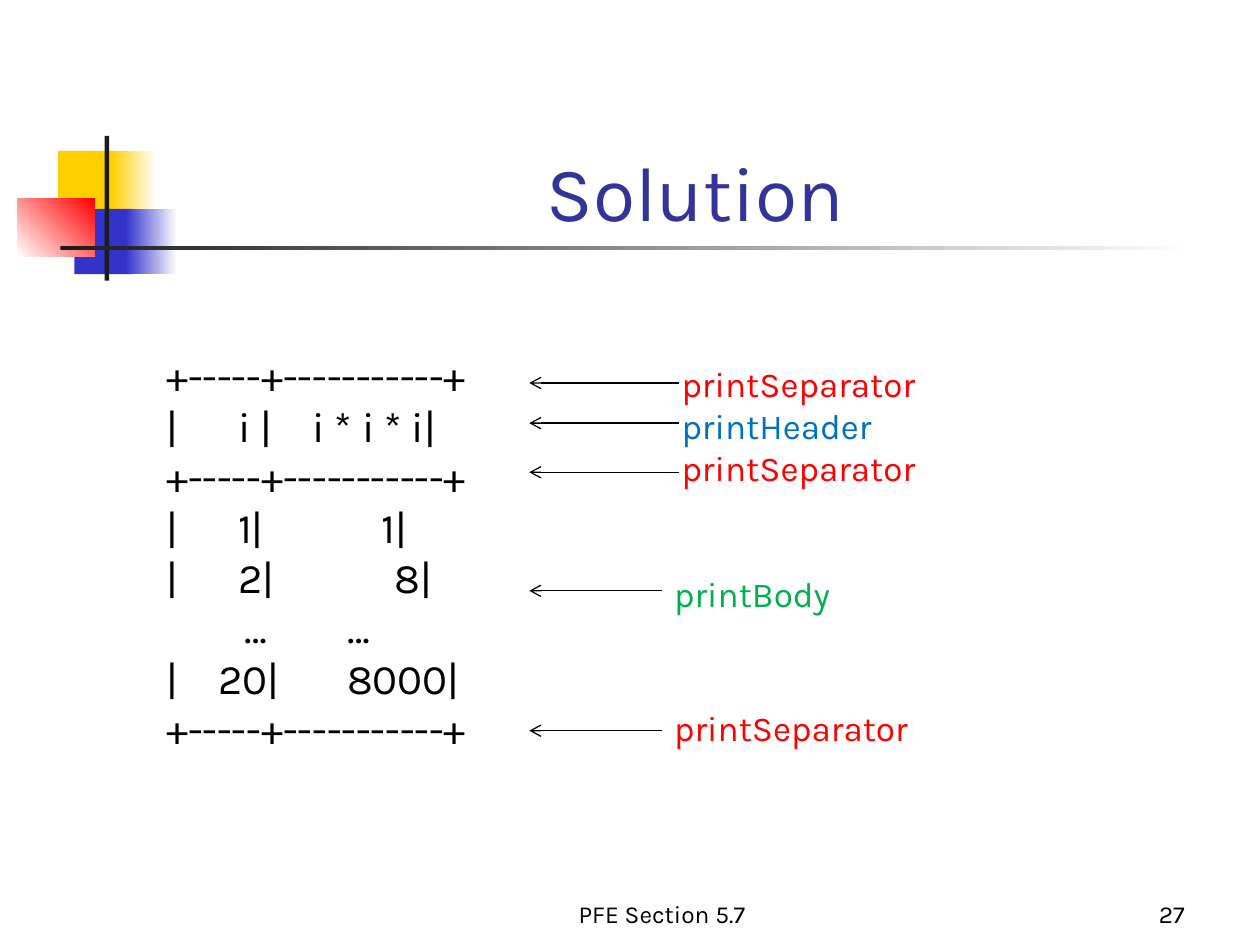
from lxml.etree import SubElement
from pptx import Presentation
from pptx.dml.color import RGBColor
from pptx.enum.shapes import MSO_CONNECTOR, MSO_SHAPE
from pptx.enum.text import MSO_ANCHOR, PP_ALIGN
from pptx.oxml.ns import qn
from pptx.util import Cm, Pt

HUES = {
    "black": "000000", "white": "FFFFFF", "dark": "1C1C1C", "gold": "FFCF01",
    "blue": "3333CC", "red": "FF0000", "navy": "333399", "sky": "0070C0",
    "green": "00B050",
}


def color(name):
    return RGBColor.from_string(HUES[name])


def apply(target, values):
    for name, value in values.items():
        setattr(target, name, value)


def add_frame(slide, box, anchor=MSO_ANCHOR.TOP):
    frame = slide.shapes.add_textbox(*map(Cm, box)).text_frame
    apply(frame, {"word_wrap": True, "vertical_anchor": anchor})
    return frame


def add_line(frame, index, text, size, hue, **format):
    line = frame.add_paragraph() if index else frame.paragraphs[0]
    apply(line, format)
    run = line.add_run()
    run.text = text
    apply(run.font, {"name": "Karla", "size": Pt(size)})
    run.font.color.rgb = color(hue)
    return line


def draw_caption(slide, box, text, size, hue, align):
    frame = add_frame(slide, box, MSO_ANCHOR.BOTTOM)
    add_line(frame, 0, text, size, hue, alignment=align)


def draw_motif(slide, box):
    left, top = box
    parts = [
        (0.81, 0.3, 1.22, 1.32, ["gold"], 0),
        (1.88, 0.3, 0.91, 1.32, ["gold", "white"], 0),
        (1.14, 1.47, 1.17, 1.32, ["blue"], 0),
        (2.18, 1.47, 1.02, 1.32, ["blue", "white"], 0),
        (0, 1.27, 1.55, 1.17, ["white", "red"], 45),
        (1.75, 0, 0.09, 2.92, ["dark"], 0),
        (0.86, 2.21, 22.86, 0.09, ["dark", "white"], 0),
    ]
    for x, y, width, height, hues, angle in parts:
        place = map(Cm, (left + x, top + y, width, height))
        part = slide.shapes.add_shape(MSO_SHAPE.RECTANGLE, *place)
        part.shadow.inherit = False
        part.line.fill.background()
        if len(hues) == 1:
            part.fill.solid()
            part.fill.fore_color.rgb = color(hues[0])
            continue
        part.fill.gradient()
        part.fill.gradient_angle = angle
        for spot, (stop, hue) in enumerate(zip(part.fill.gradient_stops, hues)):
            stop.position = spot
            stop.color.rgb = color(hue)


def draw_output(slide, box):
    rule = "+-----+-----------+"
    rows = [
        ([rule], []),
        (["|", "i |", "i * i * i|"], [1.45, 2.95]),
        ([rule], []),
        (["|", "1|", "1|"], [1.45, 4.35]),
        (["|", "2|", "8|"], [1.45, 4.6]),
        (["", "…", "…"], [1.57, 3.65]),
        (["|", "20|", "8000|"], [1.05, 3.65]),
        ([rule], []),
    ]
    frame = add_frame(slide, box)
    for index, (cells, stops) in enumerate(rows):
        line = add_line(frame, index, "\t".join(cells), 24, "black")
        if stops:
            tabs = SubElement(line._p.get_or_add_pPr(), qn("a:tabLst"))
            for stop in stops:
                SubElement(tabs, qn("a:tab"), pos=str(Cm(stop)), algn="l")


def draw_labels(slide, box):
    calls = [
        ("printSeparator", "red", 0.15, 0),
        ("printHeader", "sky", 0.15, 0),
        ("printSeparator", "red", 0.15, 0),
        ("printBody", "green", 0, 48),
        ("printSeparator", "red", 0, 52.5),
    ]
    frame = add_frame(slide, box)
    for index, (text, hue, indent, gap) in enumerate(calls):
        line = add_line(frame, index, text, 20, hue, space_before=Pt(gap))
        line._p.get_or_add_pPr().set("marL", str(Cm(indent)))


def draw_arrows(slide, box):
    left, top = box
    for width, y in [(3.02, 0), (3.02, 0.81), (3.02, 1.8), (2.67, 4.19), (2.67, 7.01)]:
        ends = map(Cm, (left + width, top + y, left, top + y))
        arrow = slide.shapes.add_connector(MSO_CONNECTOR.STRAIGHT, *ends)
        arrow.line.color.rgb = color("black")
        arrow.line.width = Pt(0.75)
        SubElement(arrow.line._get_or_add_ln(), qn("a:tailEnd"), type="arrow")
        SubElement(arrow._element.spPr, qn("a:effectLst"))


def main():
    deck = Presentation()
    apply(deck, {"slide_width": Cm(25.4), "slide_height": Cm(19.05)})
    slide = deck.slides.add_slide(deck.slide_layouts[6])
    draw_motif(slide, (0.36, 2.74))
    draw_caption(slide, (3.2, 1.73, 21.64, 3.18), "Solution", 44, "navy", PP_ALIGN.CENTER)
    draw_caption(slide, (9.32, 17.58, 8.05, 1.27), "PFE Section 5.7", 14, "black", PP_ALIGN.CENTER)
    draw_caption(slide, (18.85, 17.58, 5.28, 1.27), "27", 14, "black", PP_ALIGN.RIGHT)
    draw_labels(slide, (13.34, 7.19, 9.02, 8.28))
    draw_output(slide, (3.1, 6.93, 7.57, 8.46))
    draw_arrows(slide, (10.67, 7.72))
    deck.save("out.pptx")


if __name__ == "__main__":
    main()
